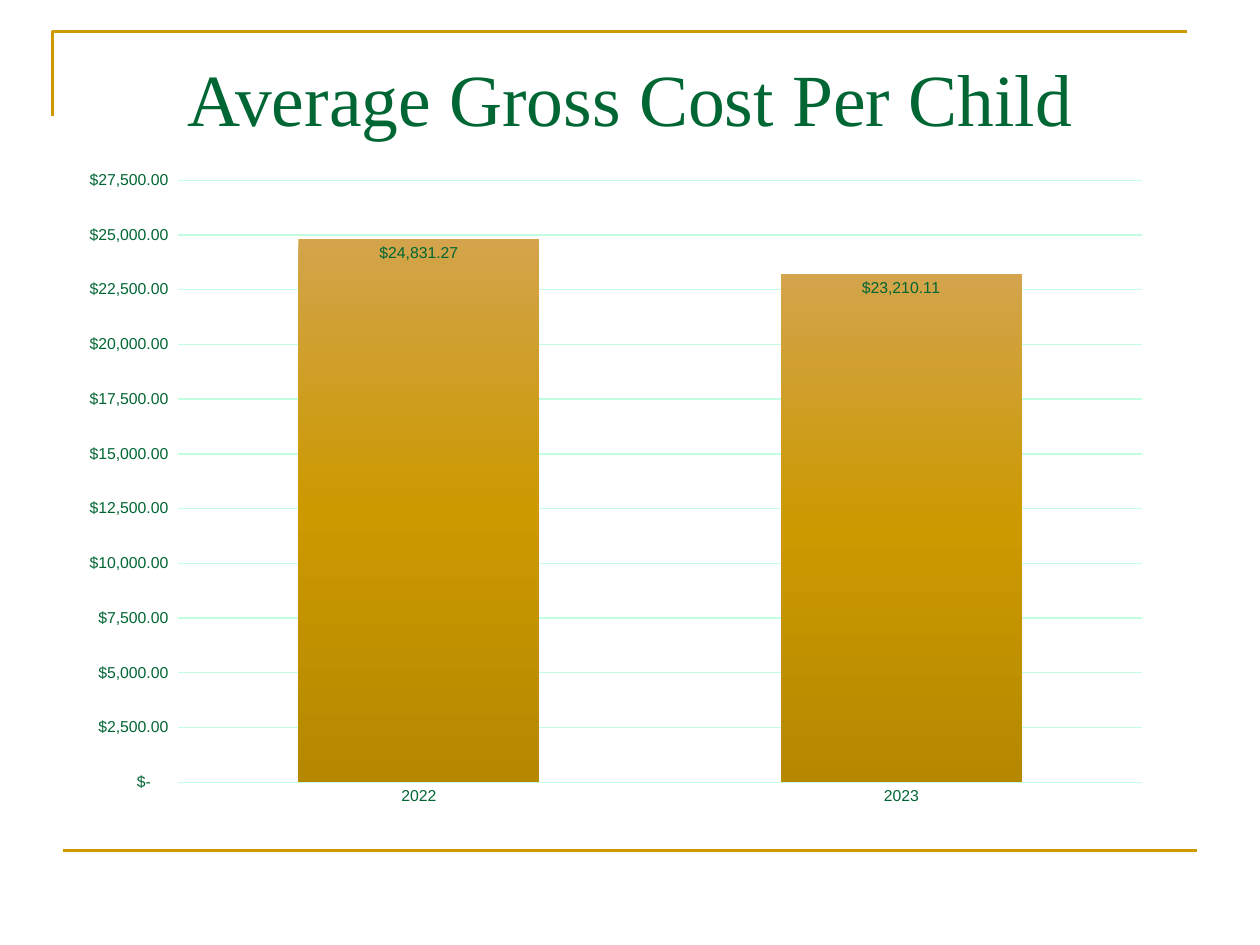
from lxml import etree
from pptx import Presentation
from pptx import util as u
from pptx.chart.data import CategoryChartData
from pptx.dml.color import RGBColor
from pptx.enum import chart as ch, shapes, text
from pptx.oxml import parse_xml
from pptx.oxml.ns import nsdecls, qn

COLOURS = {
    "gold": "CC9900",
    "gold_light": "D3A44B",
    "gold_dark": "B58800",
    "green": "006633",
    "mint": "C2FFE0",
}
AXIS_FORMAT = '_("$"* #,##0.00_);_("$"* \\(#,##0.00\\);_("$"* "-"??_);_(@_)'
LABEL_FORMAT = '"$"#,##0.00'
COSTS = {"2022": 24831.27, "2023": 23210.11}


def rgb(name):
    return RGBColor.from_string(COLOURS[name])


def style_line(line, colour, width):
    line.color.rgb = rgb(colour)
    line.width = u.Pt(width)


def style_font(font, name="Arial", size=9, colour="green"):
    font.name = name
    font.size = u.Pt(size)
    font.color.rgb = rgb(colour)


def add_text(slide, box, words, align=text.PP_ALIGN.CENTER, top_inset=0.3, **font_format):
    frame = slide.shapes.add_textbox(*map(u.Cm, box)).text_frame
    frame.word_wrap = True
    frame.vertical_anchor = text.MSO_ANCHOR.TOP
    frame.margin_top = u.Cm(top_inset)
    paragraph = frame.paragraphs[0]
    paragraph.alignment = align
    run = paragraph.add_run()
    run.text = words
    style_font(run.font, **font_format)


def add_corner_rule(slide, box):
    """Open corner: up the left side, then along the top."""
    left, top, width, height = map(u.Cm, box)
    builder = slide.shapes.build_freeform(left, top + height)
    builder.add_line_segments([(left, top), (left + width, top)], close=False)
    corner = builder.convert_to_shape()
    corner.shadow.inherit = False
    corner.fill.background()
    style_line(corner.line, "gold", 1.5)


def add_bottom_rule(slide, left, top, width):
    rule = slide.shapes.add_connector(
        shapes.MSO_CONNECTOR.STRAIGHT,
        u.Cm(left), u.Cm(top), u.Cm(left + width), u.Cm(top))
    style_line(rule.line, "gold", 1.5)
    etree.SubElement(rule._element.spPr, qn("a:effectLst"))


def fill_gradient(fill, series, stops):
    """Top-to-bottom gradient with any number of stops."""
    fill.gradient()
    fill.gradient_angle = 270
    stop_list = next(series._element.iter(qn("a:gsLst")))
    for stop in list(stop_list):
        stop_list.remove(stop)
    for percent, colour in stops:
        stop = etree.SubElement(stop_list, qn("a:gs"), pos=str(percent * 1000))
        etree.SubElement(stop, qn("a:srgbClr"), val=COLOURS[colour])


def place_plot(chart, x, y, w, h):
    """Fix the inner plot area, in fractions of the chart."""
    plot_area = chart._chartSpace.chart.plotArea
    for layout in plot_area.findall(qn("c:layout")):
        plot_area.remove(layout)
    plot_area.insert(0, parse_xml(
        f'<c:layout {nsdecls("c")}><c:manualLayout><c:layoutTarget val="inner"/>'
        '<c:xMode val="edge"/><c:yMode val="edge"/>'
        f'<c:x val="{x}"/><c:y val="{y}"/><c:w val="{w}"/><c:h val="{h}"/>'
        '</c:manualLayout></c:layout>'))


def add_cost_chart(slide, box):
    costs = CategoryChartData(number_format=LABEL_FORMAT)
    costs.categories = list(COSTS)
    costs.add_series("Series 1", list(COSTS.values()))
    chart = slide.shapes.add_chart(
        ch.XL_CHART_TYPE.COLUMN_CLUSTERED, *map(u.Cm, box), costs).chart
    chart.has_legend = False
    chart.has_title = False
    style_font(chart.font)
    place_plot(chart, 0.104, 0.034, 0.875, 0.91)

    # Axes
    years, dollars = chart.category_axis, chart.value_axis
    for axis in (years, dollars):
        axis.major_tick_mark = axis.minor_tick_mark = ch.XL_TICK_MARK.NONE
        style_font(axis.tick_labels.font)
    style_line(years.format.line, "mint", 0.75)
    dollars.format.line.fill.background()
    dollars.minimum_scale, dollars.maximum_scale = 0, 27500
    dollars.major_unit = 2500
    dollars.has_major_gridlines = True
    style_line(dollars.major_gridlines.format.line, "mint", 0.75)
    dollars.tick_labels.number_format = AXIS_FORMAT
    dollars.tick_labels.number_format_is_linked = False

    # Columns and their labels
    columns = chart.plots[0]
    columns.gap_width, columns.overlap = 100, -24
    columns.vary_by_categories = False
    series = columns.series[0]
    fill_gradient(series.format.fill, series,
                  [(0, "gold_light"), (50, "gold"), (100, "gold_dark")])
    labels = series.data_labels
    labels.show_value = True
    labels.position = ch.XL_LABEL_POSITION.INSIDE_END
    labels.number_format = LABEL_FORMAT
    labels.number_format_is_linked = False
    style_font(labels.font)


def main():
    deck = Presentation()
    deck.slide_width, deck.slide_height = u.Cm(25.4), u.Cm(19.05)
    slide = deck.slides.add_slide(deck.slide_layouts[6])

    # Frame rules
    add_corner_rule(slide, (1.06, 0.64, 22.86, 1.7))
    add_bottom_rule(slide, 1.27, 17.15, 22.86)

    # Title and chart
    add_text(slide, (1.27, 0.76, 22.86, 3.18), "Average Gross Cost Per Child",
             name="Times New Roman", size=42)
    add_cost_chart(slide, (1.27, 3.18, 22.23, 13.34))

    deck.save("out.pptx")


if __name__ == "__main__":
    main()
